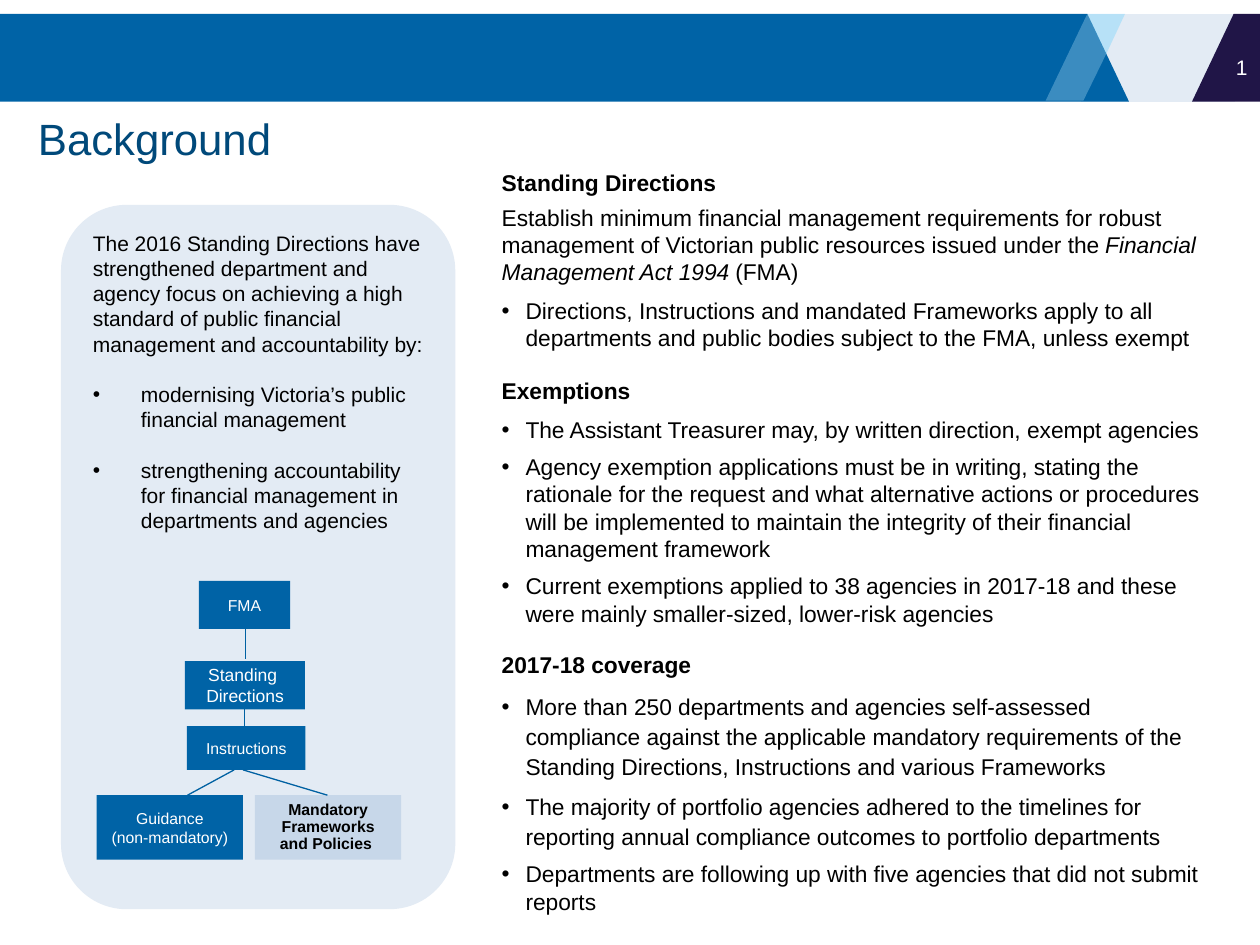
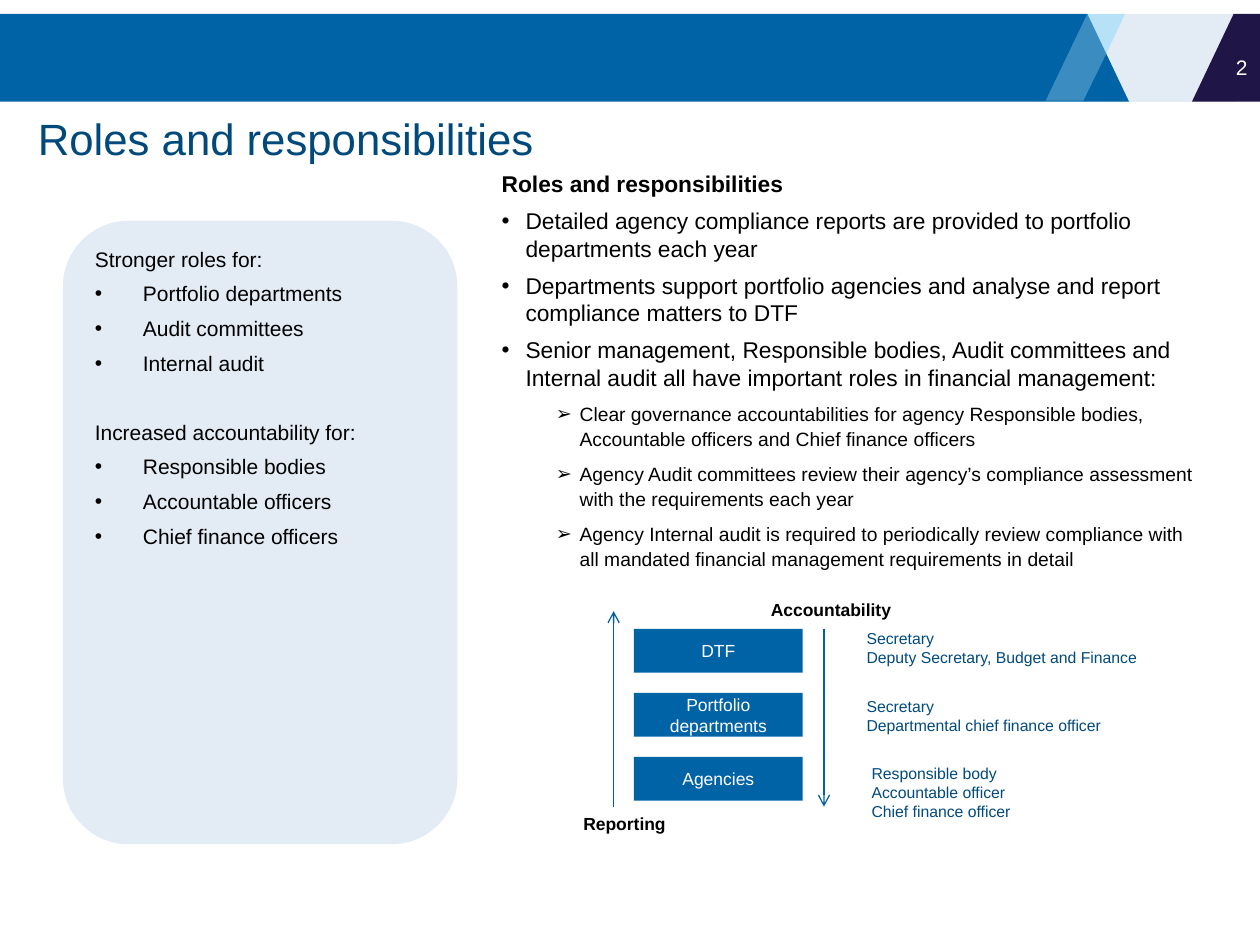
from dataclasses import dataclass
from typing import NamedTuple, Optional

from lxml.etree import SubElement
from pptx import Presentation
from pptx.dml.color import RGBColor as Rgb
from pptx.enum.shapes import MSO_CONNECTOR as Link, MSO_SHAPE as Form
from pptx.enum.text import MSO_ANCHOR as Anchor, MSO_AUTO_SIZE as Fit, PP_ALIGN as Align
from pptx.oxml.ns import qn
from pptx.util import Cm, Pt


@dataclass(frozen=True)
class Theme:
    font: str = "Arial"
    blue: str = "0063A6"
    line: str = "0061A2"
    pale: str = "E3EBF4"
    mist: str = "C7D7E9"
    sky: str = "52CCFF"
    ice: str = "C5EEFF"
    night: str = "201547"
    title: str = "00497A"
    note: str = "004A7D"
    black: str = "000000"
    white: str = "FFFFFF"
    head: int = 25
    body: int = 13
    side: int = 12
    sub: int = 11
    label: int = 10
    small: int = 9


T = Theme()


class Area(NamedTuple):
    """Left, top, width and height in centimetres."""
    x: float
    y: float
    w: float
    h: float


@dataclass(frozen=True)
class Para:
    """A paragraph; words between asterisks are italic."""
    text: str
    size: int = T.body
    bold: bool = False
    mark: str = ""
    left: float = 0
    hang: float = 0
    before: Optional[float] = None
    after: float = 3
    lead: Optional[float] = None
    level: int = 0


class Shard(NamedTuple):
    fill: str
    points: list
    alpha: int = 100


class Box(NamedTuple):
    text: str
    area: Area
    size: int = T.label
    fill: str = T.blue
    ink: str = T.white
    bold: bool = False
    lead: Optional[float] = None


class Label(NamedTuple):
    text: str
    area: Area
    size: int = T.small
    ink: str = T.note
    bold: bool = False


class Line(NamedTuple):
    start: tuple
    end: tuple
    arrow: bool = False


def head(text: str, before: float = 0, after: float = 4) -> Para:
    return Para(text, bold=True, before=before, after=after)


def dot(text: str, lead: Optional[float] = None) -> Para:
    return Para(text, mark="•", left=0.48, hang=0.48, lead=lead)


def sub(text: str) -> Para:
    return Para(text, T.sub, mark="➢", left=1.57, hang=0.48, lead=1.1, level=1)


def side(text: str, after: float = 3, before: Optional[float] = None) -> Para:
    return Para(text, T.side, before=before, after=after)


def point(text: str, after: float = 3) -> Para:
    return Para(text, T.side, mark="•", left=0.97, hang=0.97, after=after)


TOP, BASE = 0.28, 2.05
BAND = [
    Shard(T.pale, [(21.79, TOP), (24.89, TOP), (24.89, BASE), (21.79, BASE)]),
    Shard(T.blue, [(0, TOP), (21.92, TOP), (22.76, BASE), (0, BASE)]),
    Shard(T.sky, [(21.92, TOP), (22.68, TOP), (22.3, 1.09)], 30),
    Shard(T.ice, [(21.92, TOP), (21.08, 2.03), (21.84, 2.03), (22.3, 1.09)], 30),
    Shard(T.night, [(24.87, TOP), (24.03, BASE), (25.4, BASE), (25.4, TOP)]),
]

BACK_SIDE = [
    side("The 2016 Standing Directions have strengthened department and agency focus on "
         "achieving a high standard of public financial management and accountability by:", 12),
    point("modernising Victoria’s public financial management", 12),
    point("strengthening accountability for financial management in departments and agencies", 12),
]
BACK_BODY = [
    head("Standing Directions"),
    Para("Establish minimum financial management requirements for robust management of Victorian "
         "public resources issued under the *Financial Management Act 1994 *(FMA)",
         before=0, after=4),
    dot("Directions, Instructions and mandated Frameworks apply to all departments and public "
        "bodies subject to the FMA, unless exempt"),
    head("Exemptions", 11.4),
    dot("The Assistant Treasurer may, by written direction, exempt agencies"),
    dot("Agency exemption applications must be in writing, stating the rationale for the request "
        "and what alternative actions or procedures will be implemented to maintain the integrity "
        "of their financial management framework"),
    dot("Current exemptions applied to 38 agencies in 2017-18 and these were mainly "
        "smaller-sized, lower-risk agencies"),
    head("2017-18 coverage", 11),
    dot("More than 250 departments and agencies self-assessed compliance against the applicable "
        "mandatory requirements of the Standing Directions, Instructions and various Frameworks",
        1.1),
    dot("The majority of portfolio agencies adhered to the timelines for reporting annual "
        "compliance outcomes to portfolio departments", 1.1),
    dot("Departments are following up with five agencies that did not submit reports"),
]
BACK_ART = [
    Box("FMA", Area(4.01, 11.71, 1.84, 0.97), T.small),
    Box("Standing \nDirections", Area(3.73, 13.33, 2.42, 0.97)),
    Box("Instructions", Area(3.77, 14.64, 2.39, 0.88), T.small),
    Box("Mandatory Frameworks and Policies ", Area(5.14, 16.03, 2.95, 1.3), T.small,
        T.mist, T.black, True, 0.9),
    Box("Guidance\n(non-mandatory)", Area(1.95, 16.03, 2.95, 1.3), T.small),
    Line((4.93, 14.3), (4.93, 14.64)),
    Line((4.72, 15.52), (3.78, 16.03)),
    Line((4.9, 15.52), (6.6, 16.03)),
    Line((4.95, 12.67), (4.95, 13.28)),
]

ROLE_SIDE = [
    side("Stronger roles for:"),
    *map(point, ("Portfolio departments", "Audit committees", "Internal audit")),
    side("Increased accountability for:", before=22),
    *map(point, ("Responsible bodies", "Accountable officers", "Chief finance officers")),
]
ROLE_BODY = [
    head("Roles and responsibilities", after=3),
    dot("Detailed agency compliance reports are provided to portfolio departments each year"),
    dot("Departments support portfolio agencies and analyse and report compliance matters to DTF"),
    dot("Senior management, Responsible bodies, Audit committees and Internal audit all have "
        "important roles in financial management:"),
    sub("Clear governance accountabilities for agency Responsible bodies, Accountable officers "
        "and Chief finance officers"),
    sub("Agency Audit committees review their agency’s compliance assessment with the "
        "requirements each year"),
    sub("Agency Internal audit is required to periodically review compliance with all mandated "
        "financial management requirements in detail"),
]
ROLE_ART = [
    *(Box(tier, Area(12.78, 12.68 + 1.29 * i, 3.4, 0.88))
      for i, tier in enumerate(("DTF", "Portfolio departments", "Agencies"))),
    Line((12.37, 16.26), (12.37, 12.32), True),
    Label("Reporting", Area(11.51, 16.26, 2.84, 0.69), T.label, T.black, True),
    Line((16.61, 12.67), (16.61, 16.26), True),
    Label("Accountability", Area(15.29, 11.96, 3.05, 0.69), T.label, T.black, True),
    Label("Secretary\nDeputy Secretary, Budget and Finance", Area(17.22, 12.55, 6.6, 1.02)),
    Label("Secretary\nDepartmental chief finance officer", Area(17.22, 13.92, 6.6, 1.02)),
    Label("Responsible body\nAccountable officer\nChief finance officer",
          Area(17.32, 15.27, 6.6, 1.42)),
]


def ink(font, size: int, color: str, bold: bool = False) -> None:
    font.name, font.size, font.bold = T.font, Pt(size), bold
    font.color.rgb = Rgb.from_string(color)


def paint(shape, color: str) -> None:
    shape.fill.solid()
    shape.fill.fore_color.rgb = Rgb.from_string(color)
    shape.line.fill.background()


def place(shape, area: Area) -> None:
    shape.left, shape.top, shape.width, shape.height = map(Cm, area)


def write(shape, text: str, size: int, color: str, bold: bool = False,
          align=Align.LEFT, anchor=Anchor.TOP, lead: Optional[float] = None) -> None:
    frame = shape.text_frame
    frame.text = text
    frame.word_wrap, frame.auto_size, frame.vertical_anchor = True, Fit.NONE, anchor
    for par in frame.paragraphs:
        par.alignment, par.line_spacing = align, lead
        ink(par.font, size, color, bold)


def fill_list(shape, items: list) -> None:
    frame = shape.text_frame
    frame.word_wrap, frame.auto_size = True, Fit.NONE
    for i, item in enumerate(items):
        par = frame.add_paragraph() if i else frame.paragraphs[0]
        par.level, par.line_spacing = item.level, item.lead
        par.space_after = Pt(item.after)
        if item.before is not None:
            par.space_before = Pt(item.before)
        props = par._p.get_or_add_pPr()
        props.set("marL", str(Cm(item.left)))
        props.set("indent", str(-Cm(item.hang)))
        if item.mark:
            SubElement(props, qn("a:buChar"), char=item.mark)
        else:
            SubElement(props, qn("a:buNone"))
        ink(par.font, item.size, T.black, item.bold)
        for j, part in enumerate(item.text.split("*")):
            run = par.add_run()
            run.text = part
            if j % 2:
                run.font.italic = True


def add_shard(slide, shard: Shard) -> None:
    first, *rest = [(Cm(x), Cm(y)) for x, y in shard.points]
    pen = slide.shapes.build_freeform(*first)
    pen.add_line_segments(rest, close=True)
    shape = pen.convert_to_shape()
    shape.shadow.inherit = False
    paint(shape, shard.fill)
    if shard.alpha < 100:
        color = shape._element.spPr.find(f".//{qn('a:srgbClr')}")
        SubElement(color, qn("a:alpha"), val=str(shard.alpha * 1000))


def add_box(slide, box: Box) -> None:
    shape = slide.shapes.add_shape(Form.RECTANGLE, *map(Cm, box.area))
    shape.shadow.inherit = False
    paint(shape, box.fill)
    write(shape, box.text, box.size, box.ink, box.bold, Align.CENTER, Anchor.MIDDLE, box.lead)


def add_label(slide, label: Label) -> None:
    shape = slide.shapes.add_textbox(*map(Cm, label.area))
    write(shape, label.text, label.size, label.ink, label.bold)


def add_line(slide, line: Line) -> None:
    link = slide.shapes.add_connector(Link.STRAIGHT, *map(Cm, line.start + line.end))
    link.line.width = Pt(0.75)
    link.line.color.rgb = Rgb.from_string(T.line)
    if line.arrow:
        SubElement(link.line._get_or_add_ln(), qn("a:tailEnd"), type="arrow")
    SubElement(link._element.spPr, qn("a:effectLst"))


def add_number(slide, number: int) -> None:
    shape = slide.shapes.add_textbox(*map(Cm, Area(24.33, 0.84, 1.07, 1.02)))
    write(shape, str(number), T.side, T.white, align=Align.RIGHT, anchor=Anchor.MIDDLE)


def round_off(shape) -> None:
    """Give a placeholder the outline of a rounded rectangle."""
    form = SubElement(shape._element.spPr, qn("a:prstGeom"), prst="roundRect")
    SubElement(form, qn("a:avLst"))


DRAW = {Box: add_box, Label: add_label, Line: add_line}


def add_page(deck, title: str, panel: Area, notes: list, main: Area, body: list, art: list) -> None:
    slide = deck.slides.add_slide(deck.slide_layouts[3])
    name, left, right = slide.placeholders
    for shard in BAND:
        add_shard(slide, shard)
    place(name, Area(0.51, 1.91, 22.86, 1.73))
    write(name, title, T.head, T.title, anchor=Anchor.MIDDLE)
    place(left, panel)
    round_off(left)
    paint(left, T.pale)
    fill_list(left, notes)
    place(right, main)
    fill_list(right, body)
    add_number(slide, len(deck.slides))
    for item in art:
        DRAW[type(item)](slide, item)


def main() -> None:
    deck = Presentation()
    deck.slide_width, deck.slide_height = Cm(25.4), Cm(19.05)
    add_page(deck, "Background", Area(1.23, 4.13, 7.95, 14.2), BACK_SIDE,
             Area(9.86, 3.28, 14.68, 15.44), BACK_BODY, BACK_ART)
    add_page(deck, "Roles and responsibilities", Area(1.27, 4.45, 7.95, 12.57), ROLE_SIDE,
             Area(9.86, 3.3, 14.68, 15.14), ROLE_BODY, ROLE_ART)
    deck.save("out.pptx")


if __name__ == "__main__":
    main()
